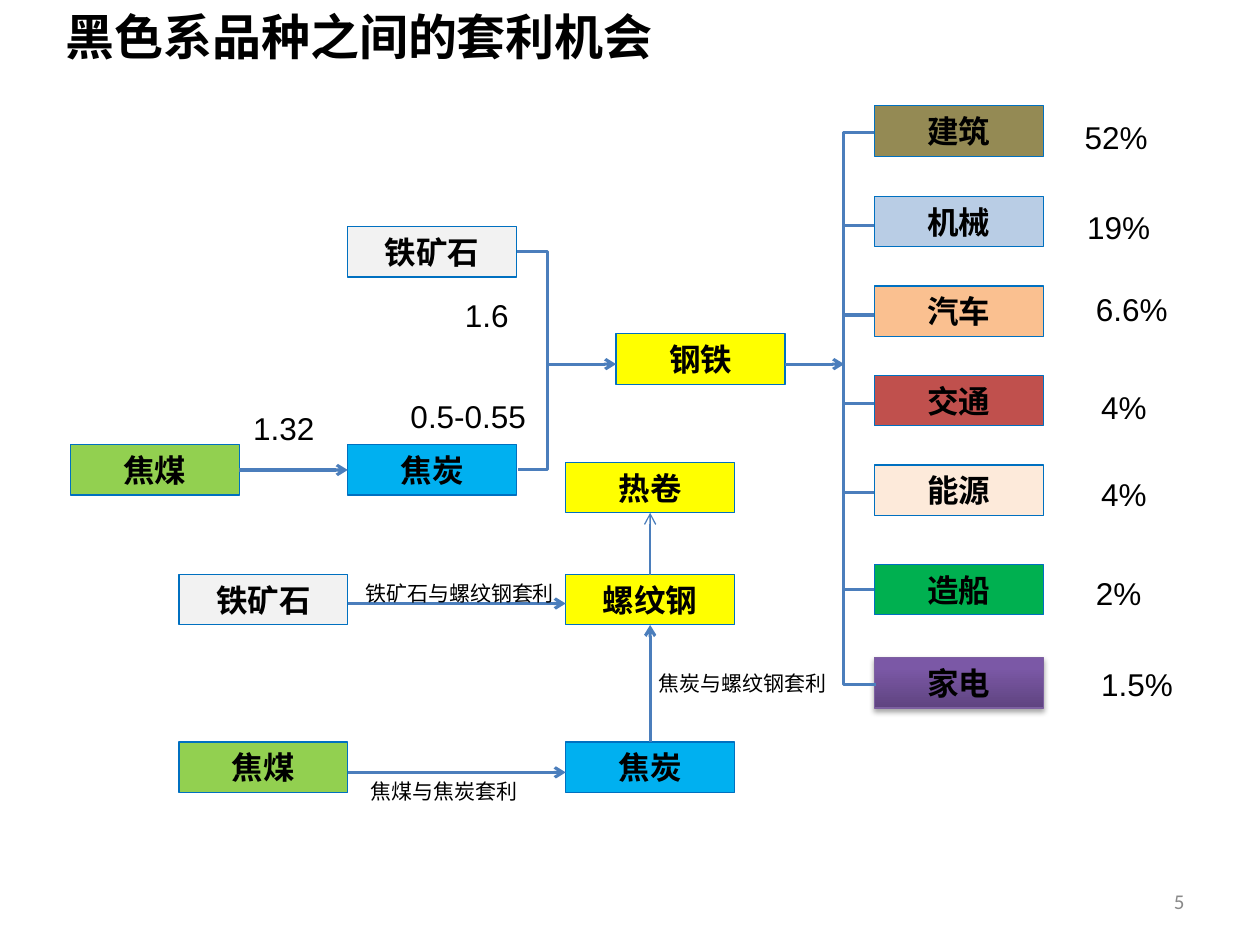
"""Build a slide on arbitrage links along the ferrous metals chain."""
from dataclasses import dataclass
from typing import Optional

from lxml.etree import SubElement
from pptx import Presentation
from pptx.dml.color import RGBColor
from pptx.enum.shapes import MSO_CONNECTOR as Link, MSO_SHAPE as Preset
from pptx.enum.text import MSO_ANCHOR as Anchor, MSO_AUTO_SIZE as Fit, PP_ALIGN as Align
from pptx.oxml.ns import qn
from pptx.util import Inches, Pt

BLACK = RGBColor(0x00, 0x00, 0x00)
GREY = RGBColor(0x89, 0x89, 0x89)
BORDER = RGBColor(0x00, 0x70, 0xC0)
LINK = RGBColor(0x4B, 0x7E, 0xBC)
ORE = RGBColor(0xF2, 0xF2, 0xF2)
COKE = RGBColor(0x00, 0xB0, 0xF0)
COAL = RGBColor(0x92, 0xD0, 0x50)
STEEL = RGBColor(0xFF, 0xFF, 0x00)
BUILDING = RGBColor(0x94, 0x8A, 0x54)
MACHINERY = RGBColor(0xB9, 0xCD, 0xE5)
CARS = RGBColor(0xFA, 0xC0, 0x90)
TRANSPORT = RGBColor(0xC0, 0x50, 0x4D)
ENERGY = RGBColor(0xFD, 0xEA, 0xDA)
SHIPS = RGBColor(0x00, 0xB0, 0x50)
PURPLE_DARK = RGBColor(0x5F, 0x44, 0x80)
PURPLE_LIGHT = RGBColor(0x7B, 0x58, 0xA6)
PURPLE_EDGE = RGBColor(0x7D, 0x60, 0xA0)

BOX_WIDTH, BOX_HEIGHT = 1.34, 0.4
SECTOR_LEFT, TRUNK = 6.94, 6.7
TOP, LEFT, BOTTOM, RIGHT = range(4)


@dataclass
class Box:
    key: str
    text: str
    left: float
    top: float
    fill: RGBColor


@dataclass
class Label:
    text: str
    left: float
    top: float
    width: float
    size: int = 18
    font: str = "Arial"


@dataclass
class Line:
    start: tuple[float, float]
    end: tuple[float, float]
    begin_at: Optional[tuple[str, int]] = None
    end_at: Optional[tuple[str, int]] = None
    arrow: bool = True
    weight: float = 1.75


@dataclass
class Sector:
    name: str
    top: float
    fill: RGBColor
    share: Label
    tick: Optional[float] = None


BOXES = [
    Box("ore", "铁矿石", 2.76, 1.8, ORE),
    Box("coke", "焦炭", 2.76, 3.53, COKE),
    Box("steel", "钢铁", 4.89, 2.65, STEEL),
    Box("coal", "焦煤", 0.56, 3.53, COAL),
    Box("ore trade", "铁矿石", 1.42, 4.56, ORE),
    Box("rebar", "螺纹钢", 4.49, 4.56, STEEL),
    Box("coke trade", "焦炭", 4.49, 5.89, COKE),
    Box("coal trade", "焦煤", 1.42, 5.89, COAL),
    Box("hot coil", "热卷", 4.49, 3.67, STEEL),
]
SECTORS = [
    Sector("建筑", 0.84, BUILDING, Label("52%", 8.51, 0.89, 0.94)),
    Sector("机械", 1.56, MACHINERY, Label("19%", 8.53, 1.6, 0.94), 1.79),
    Sector("汽车", 2.27, CARS, Label("6.6%", 8.6, 2.25, 0.94), 2.5),
    Sector("交通", 2.98, TRANSPORT, Label("4%", 8.64, 3.03, 0.94), 3.2),
    Sector("能源", 3.69, ENERGY, Label("4%", 8.64, 3.72, 0.94), 3.91),
    Sector("造船", 4.48, SHIPS, Label("2%", 8.6, 4.51, 0.94), 4.68),
    Sector("家电", 5.22, PURPLE_DARK, Label("1.5%", 8.64, 5.23, 0.94)),
]
LINES = [
    Line((1.9, 3.73), (2.76, 3.73), ("coal", RIGHT), ("coke", LEFT)),
    Line((4.34, 2.89), (4.89, 2.89)),
    Line((6.23, 2.89), (TRUNK, 2.89)),
    Line((2.76, 6.13), (4.49, 6.13)),
    Line((2.76, 4.79), (4.49, 4.79)),
    Line((5.16, 5.89), (5.16, 4.96), ("coke trade", TOP), ("rebar", BOTTOM)),
    Line((5.16, 4.56), (5.16, 4.07), ("rebar", TOP), ("hot coil", BOTTOM), weight=0.75),
]
LABELS = [
    Label("焦煤与焦炭套利", 2.84, 6.13, 1.42, 12, "Noto Sans CJK SC"),
    Label("铁矿石与螺纹钢套利", 2.8, 4.56, 4.88, 12),
    Label("焦炭与螺纹钢套利", 5.13, 5.27, 1.57, 12, "Noto Sans CJK SC"),
    Label("1.6", 3.59, 2.3, 0.71),
    Label("0.5-0.55", 3.16, 3.1, 1.16),
    Label("1.32", 1.91, 3.2, 0.71),
]


def write(shape, text: str, align=Align.LEFT, anchor=Anchor.TOP, color=BLACK, **formats) -> None:
    frame = shape.text_frame
    frame.word_wrap = True
    frame.auto_size = Fit.NONE
    frame.vertical_anchor = anchor
    paragraph = frame.paragraphs[0]
    paragraph.text = text
    paragraph.alignment = align
    font = paragraph.runs[0].font
    for name, value in formats.items():
        setattr(font, name, value)
    font.color.rgb = color


def add_box(slide, box: Box):
    shape = slide.shapes.add_shape(
        Preset.RECTANGLE, Inches(box.left), Inches(box.top), Inches(BOX_WIDTH), Inches(BOX_HEIGHT))
    shape.shadow.inherit = False
    shape.fill.solid()
    shape.fill.fore_color.rgb = box.fill
    shape.line.color.rgb = BORDER
    shape.line.width = Pt(0.75)
    write(shape, box.text, Align.CENTER, size=Pt(18), name="Arial", bold=True)
    return shape


def add_label(slide, label: Label) -> None:
    height = 0.4 if label.size == 18 else 0.3
    shape = slide.shapes.add_textbox(
        Inches(label.left), Inches(label.top), Inches(label.width), Inches(height))
    write(shape, label.text, size=Pt(label.size), name=label.font)


def add_link(slide, line: Line, boxes: dict, kind=Link.STRAIGHT):
    connector = slide.shapes.add_connector(kind, *map(Inches, line.start + line.end))
    if line.begin_at:
        connector.begin_connect(boxes[line.begin_at[0]], line.begin_at[1])
    if line.end_at:
        connector.end_connect(boxes[line.end_at[0]], line.end_at[1])
    connector.line.color.rgb = LINK
    connector.line.width = Pt(line.weight)
    if line.arrow:
        SubElement(connector.line._get_or_add_ln(), qn("a:tailEnd"), type="arrow")
    SubElement(connector._element.spPr, qn("a:effectLst"))
    return connector


def add_bracket(slide, x: float, top: float, bottom: float, reach: float) -> None:
    span = 0.01
    line = Line((x, top), (x + span, bottom), arrow=False)
    connector = add_link(slide, line, {}, Link.ELBOW)
    guides = connector._element.spPr.find(qn("a:prstGeom")).get_or_add_avLst()
    SubElement(guides, qn("a:gd"), name="adj1", fmla=f"val {round(reach / span * 100000)}")


def add_relief(shape) -> None:
    shape.fill.gradient()
    shape.fill.gradient_angle = 90
    stops = zip(shape.fill.gradient_stops, (0, 0.8), (PURPLE_DARK, PURPLE_LIGHT))
    for stop, position, color in stops:
        stop.position = position
        stop.color.rgb = color
    shape.line.color.rgb = PURPLE_EDGE
    effects = shape._element.spPr.find(qn("a:effectLst"))
    shadow = SubElement(effects, qn("a:outerShdw"), blurRad=str(Pt(3.1)), dist=str(Pt(1.8)),
                        dir="5400000", rotWithShape="0")
    color = SubElement(shadow, qn("a:srgbClr"), val=str(BLACK))
    SubElement(color, qn("a:alpha"), val="35000")


def main() -> None:
    presentation = Presentation()
    presentation.slide_width, presentation.slide_height = Inches(10), Inches(7.5)
    slide = presentation.slides.add_slide(presentation.slide_layouts[5])
    title = slide.shapes.title
    title.left, title.top, title.width, title.height = map(Inches, (0.42, 0, 8.11, 0.57))
    write(title, "黑色系品种之间的套利机会", size=Pt(28), name="Calibri", bold=True)

    sectors = [Box(item.name, item.name, SECTOR_LEFT, item.top, item.fill) for item in SECTORS]
    boxes = {box.key: add_box(slide, box) for box in BOXES + sectors}
    add_relief(boxes["家电"])
    add_bracket(slide, 4.1, 2, 3.73, 0.25)
    add_bracket(slide, SECTOR_LEFT, 1.05, 5.43, -0.25)
    ticks = [Line((TRUNK, item.tick), (SECTOR_LEFT, item.tick), arrow=False,
                  end_at=(item.name, LEFT) if item.name == "造船" else None)
             for item in SECTORS if item.tick]
    for line in LINES + ticks:
        add_link(slide, line, boxes)
    for label in LABELS + [item.share for item in SECTORS]:
        add_label(slide, label)

    number = slide.shapes.add_textbox(*map(Inches, (7.17, 6.95, 2.33, 0.4)))
    write(number, "5", Align.RIGHT, Anchor.MIDDLE, GREY, size=Pt(12), name="Calibri")
    presentation.save("out.pptx")


if __name__ == "__main__":
    main()
